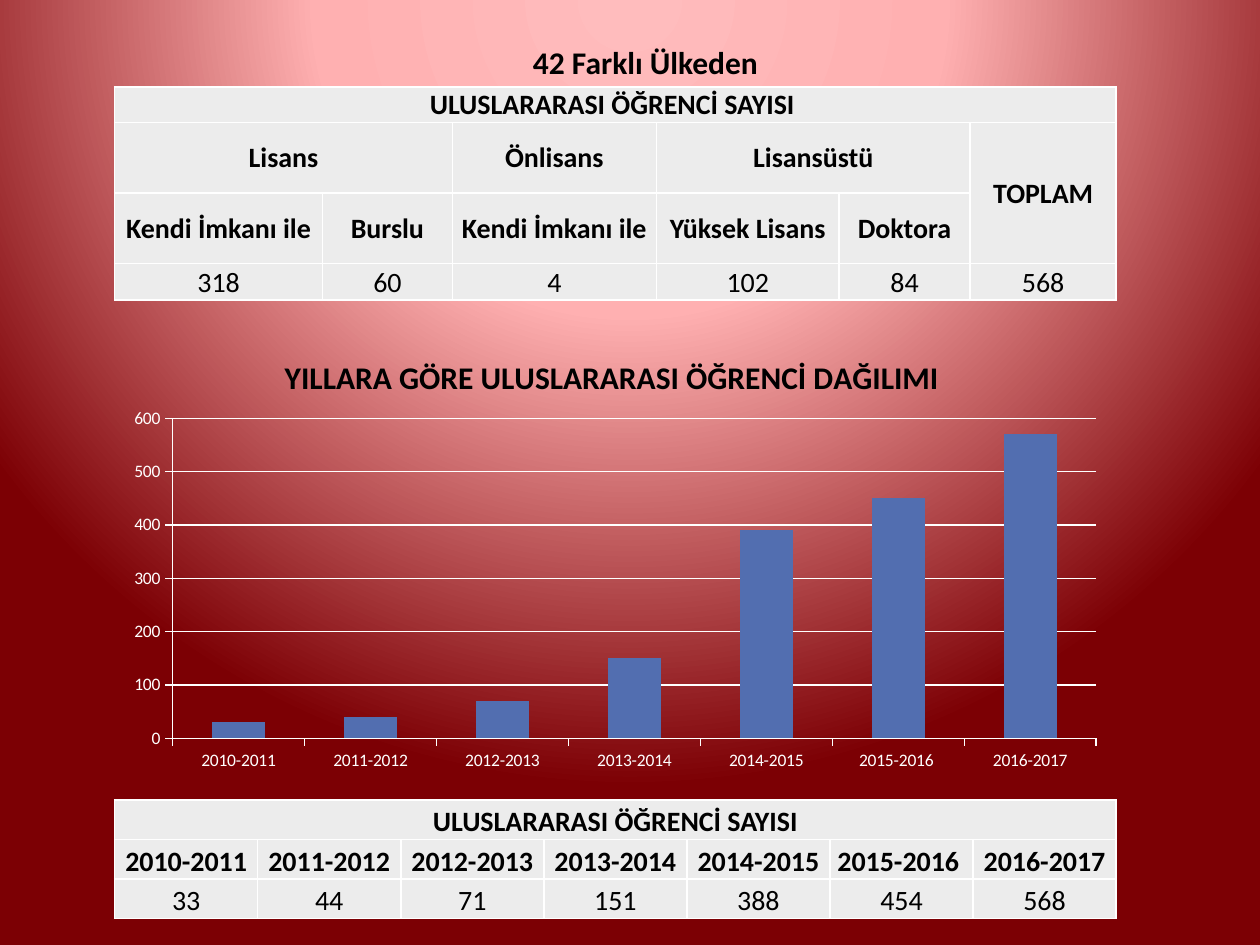
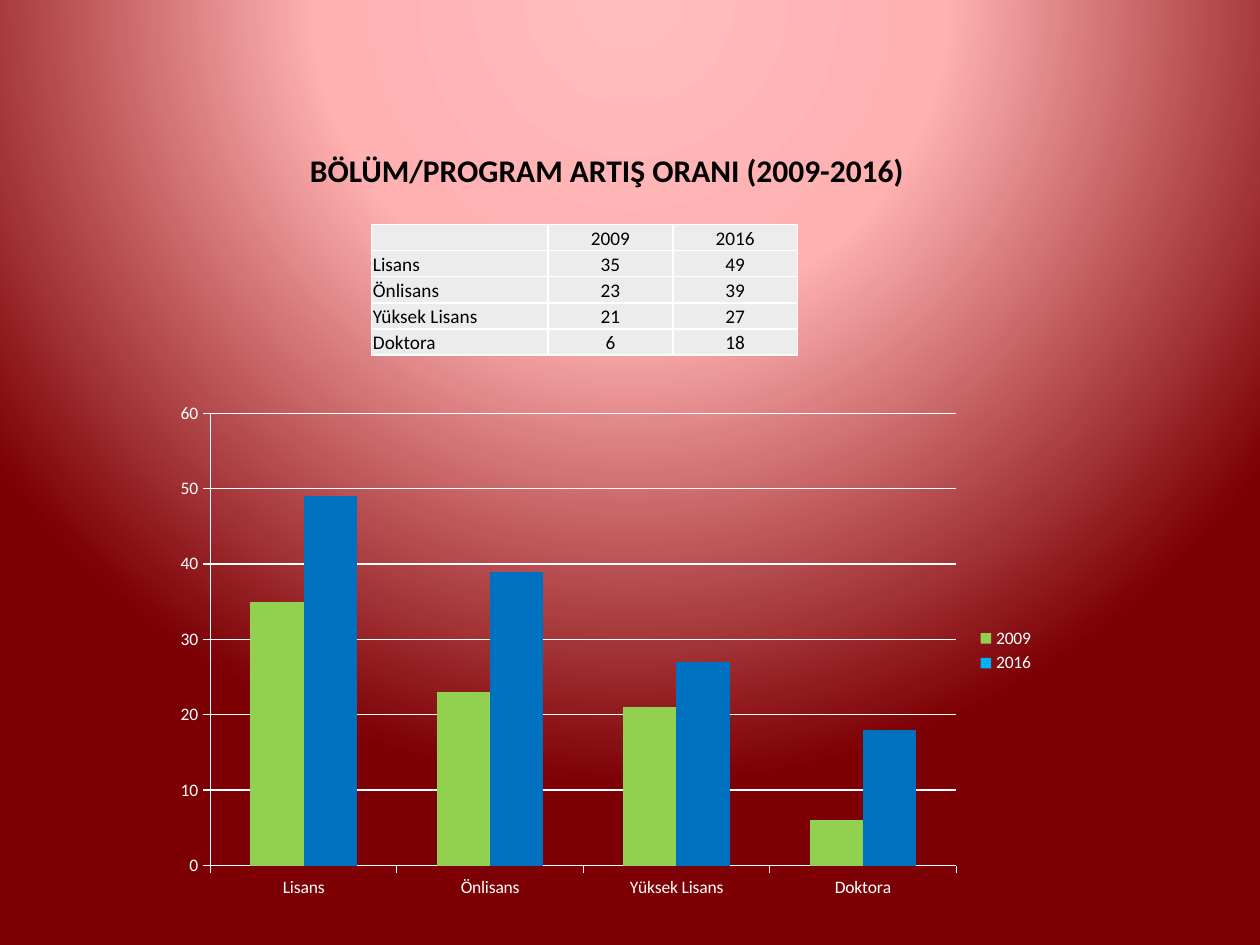
"""Build two slides on student and programme numbers."""
from lxml import etree
from pptx import Presentation
from pptx.chart.data import CategoryChartData as ChartData
from pptx.dml.color import RGBColor
from pptx.enum.chart import XL_CHART_TYPE as Kind, XL_LEGEND_POSITION as Side, XL_TICK_MARK as Tick
from pptx.enum.text import MSO_ANCHOR as Anchor, MSO_AUTO_SIZE as Auto, PP_ALIGN as Align
from pptx.oxml import parse_xml
from pptx.oxml.ns import nsdecls, qn
from pptx.util import Inches, Pt

BLACK = RGBColor(0, 0, 0)
WHITE = RGBColor(255, 255, 255)
PALE = RGBColor(0xEC, 0xEC, 0xEC)
STEEL = RGBColor(0x52, 0x6E, 0xB0)
GREEN = RGBColor(0x92, 0xD0, 0x50)
SKY = RGBColor(0x00, 0xB0, 0xF0)
BLUE = RGBColor(0x00, 0x70, 0xC0)
GLOW = ((0, RGBColor(0xFF, 0xBC, 0xBD)), (40, RGBColor(0xFF, 0xB0, 0xB1)),
        (100, RGBColor(0x7C, 0x00, 0x04)))
FACE = "Calibri"
HEAD = {"name": FACE, "size": Pt(18), "bold": True}
CELL = {"margin_left": Inches(0.01), "margin_right": Inches(0.01),
        "margin_top": Inches(0.01), "margin_bottom": 0}
FRAME = {"auto_size": Auto.NONE, "word_wrap": False, "vertical_anchor": Anchor.TOP}
COUNT = "ULUSLARARASI ÖĞRENCİ SAYISI"
YEARS = ["2010-2011", "2011-2012", "2012-2013", "2013-2014", "2014-2015",
         "2015-2016 ", "2016-2017"]
TOTALS = [33, 44, 71, 151, 388, 454, 568]
LEVELS = ["Lisans", "Önlisans", "Yüksek Lisans", "Doktora"]
OLD, NEW = [35, 23, 21, 6], [49, 39, 27, 18]


def style(item, form):
    """Set each attribute named in form."""
    for key, val in form.items():
        setattr(item, key, val)


def ink(font, form, tint=BLACK):
    """Format a font and colour it."""
    style(font, form)
    font.color.rgb = tint


def paint(fill, tint):
    """Fill with one colour."""
    fill.solid()
    fill.fore_color.rgb = tint


def box(*nums):
    """Turn numbers into inches."""
    return [Inches(n) for n in nums]


def glow(master):
    """Give the master its round red gradient."""
    master.background.fill.solid()
    stops = "".join(f'<a:gs pos="{at * 1000}"><a:srgbClr val="{tint}"/></a:gs>'
                    for at, tint in GLOW)
    grad = parse_xml(
        f'<a:gradFill {nsdecls("a")} rotWithShape="1"><a:gsLst>{stops}</a:gsLst>'
        '<a:path path="circle"><a:fillToRect l="50000" t="-80000" r="50000" b="180000"/>'
        '</a:path></a:gradFill>')
    solid = master.element.find(".//" + qn("p:bgPr")).find(qn("a:solidFill"))
    solid.getparent().replace(solid, grad)


def page(deck, text, place):
    """Add a slide with its title."""
    slide = deck.slides.add_slide(deck.slide_layouts[5])
    title = slide.shapes.title
    style(title, dict(zip(("left", "top", "width", "height"), box(*place))))
    style(title.text_frame, FRAME)
    para = title.text_frame.paragraphs[0]
    para.alignment = Align.LEFT
    run = para.add_run()
    run.text = text
    ink(run.font, HEAD)
    return slide


def edge(cell):
    """Draw white lines on all sides of a cell."""
    props = cell._tc.get_or_add_tcPr()
    for pos, side in enumerate(("lnL", "lnR", "lnT", "lnB")):
        line = etree.Element(qn("a:" + side), w="12700")
        fill = etree.SubElement(line, qn("a:solidFill"))
        etree.SubElement(fill, qn("a:srgbClr"), val=str(WHITE))
        props.insert(pos, line)


def write(cell, text, size, bold, align, anchor):
    """Fill, line and letter one cell."""
    paint(cell.fill, PALE)
    edge(cell)
    style(cell, {**CELL, "vertical_anchor": anchor})
    para = cell.text_frame.paragraphs[0]
    para.alignment = align
    if text == "":
        para._p.get_or_add_endParaRPr().set("sz", str(size * 100))
        return
    run = para.add_run()
    run.text = str(text)
    ink(run.font, {"name": FACE, "size": Pt(size), "bold": bold})


def grid(slide, place, wide, high, rows, size, heads=0, spans=(), mid=(), names=False):
    """Add a table; heads counts bold rows, mid lists centred ones."""
    shape = slide.shapes.add_table(len(rows), len(wide), *box(*place))
    table = shape.table
    for col, width in zip(table.columns, wide):
        col.width = Inches(width)
    for row, height in zip(table.rows, high):
        row.height = Inches(height)
    for r, row in enumerate(rows):
        anchor = Anchor.MIDDLE if r in mid else Anchor.BOTTOM
        for c, text in enumerate(row):
            align = Align.LEFT if names and c == 0 else Align.CENTER
            write(table.cell(r, c), text, size, r < heads, align, anchor)
    for top, left, low, right in spans:
        table.cell(top, left).merge(table.cell(low, right))


def inset(chart, place, inner):
    """Fix the inner plot area, given in inches on the slide."""
    left, top, width, height = place
    x, y, w, h = inner
    spots = ((x - left) / width, (y - top) / height, w / width, h / height)
    marks = "".join(f'<c:{key} val="{val:.4f}"/>' for key, val in zip("xywh", spots))
    area = chart._chartSpace.find(".//" + qn("c:plotArea"))
    for old in area.findall(qn("c:layout")):
        area.remove(old)
    area.insert(0, parse_xml(
        f'<c:layout {nsdecls("c")}><c:manualLayout><c:layoutTarget val="inner"/>'
        f'<c:xMode val="edge"/><c:yMode val="edge"/>{marks}</c:manualLayout></c:layout>'))


def bars(slide, place, inner, cats, sets, top):
    """Add a column chart from (name, values, colour) sets."""
    data = ChartData()
    data.categories = cats
    for name, vals, _ in sets:
        data.add_series(name, vals)
    chart = slide.shapes.add_chart(Kind.COLUMN_CLUSTERED, *box(*place), data).chart
    ink(chart.font, {"name": FACE, "size": Pt(10)}, WHITE)
    style(chart, {"has_title": False, "has_legend": len(sets) > 1})
    plot = chart.plots[0]
    style(plot, {"gap_width": 150, "vary_by_categories": False})
    for item, (_, _, tint) in zip(plot.series, sets):
        paint(item.format.fill, tint)
    for axis in (chart.category_axis, chart.value_axis):
        style(axis, {"major_tick_mark": Tick.OUTSIDE, "minor_tick_mark": Tick.NONE})
        axis.format.line.color.rgb = WHITE
    scale = chart.value_axis
    style(scale, {"minimum_scale": 0, "maximum_scale": top, "major_unit": top / 6,
                  "has_major_gridlines": True})
    scale.major_gridlines.format.line.color.rgb = WHITE
    if chart.has_legend:
        style(chart.legend, {"position": Side.RIGHT, "include_in_layout": False})
    inset(chart, place, inner)
    return chart


def label(chart, text):
    """Put a title on a chart."""
    frame = chart.chart_title.text_frame
    frame.text = text
    ink(frame.paragraphs[0].runs[0].font, HEAD)
    chart.chart_title.include_in_layout = False


def students(deck):
    """Build the slide on foreign students."""
    slide = page(deck, "42 Farklı Ülkeden", (4.13, 0.29, 2.06, 0.4))
    own = "Kendi İmkanı ile"
    rows = [[COUNT + " "] + [""] * 5,
            ["Lisans", "", "Önlisans", "Lisansüstü", "", "TOPLAM"],
            [own, "Burslu", own, "Yüksek Lisans", "Doktora", ""],
            [318, 60, 4, 102, 84, 568]]
    grid(slide, (0.91, 0.69, 7.95, 1.7), (1.65, 1.03, 1.62, 1.45, 1.04, 1.16),
         (0.28, 0.56, 0.56, 0.29), rows, 16, heads=3, mid=(1, 2),
         spans=((0, 0, 0, 5), (1, 0, 1, 1), (1, 3, 1, 4), (1, 5, 2, 5)))
    tens = [round(n, -1) for n in TOTALS]
    chart = bars(slide, (0.91, 2.65, 7.95, 3.54), (1.37, 3.32, 7.33, 2.54), YEARS,
                 [("Series 1", tens, STEEL)], 600)
    label(chart, "YILLARA GÖRE ULUSLARARASI ÖĞRENCİ DAĞILIMI ")
    size = len(YEARS)
    grid(slide, (0.91, 6.35, 7.95, 0.94), [7.95 / size] * size, [0.94 / 3] * 3,
         [[COUNT] + [""] * (size - 1), YEARS, TOTALS], 16, heads=2,
         spans=((0, 0, 0, size - 1),))


def growth(deck):
    """Build the slide on programme growth."""
    slide = page(deck, "BÖLÜM/PROGRAM ARTIŞ ORANI (2009-2016)", (2.36, 1.15, 4.96, 0.4))
    grid(slide, (2.95, 1.78, 3.39, 1.04), (1.4, 0.99, 0.99), [1.04 / 5] * 5,
         [["", 2009, 2016], *zip(LEVELS, OLD, NEW)], 11, names=True)
    chart = bars(slide, (1.3, 3.12, 7.01, 4.09), (1.67, 3.28, 5.92, 3.59), LEVELS,
                 [("2009", OLD, GREEN), ("2016", NEW, SKY)], 60)
    last = chart.plots[0].series[1]
    for pos in range(len(LEVELS)):
        paint(last.points[pos].format.fill, BLUE)


def main():
    """Build and save the deck."""
    deck = Presentation()
    style(deck, {"slide_width": Inches(10), "slide_height": Inches(7.5)})
    glow(deck.slide_master)
    students(deck)
    growth(deck)
    deck.save("out.pptx")


if __name__ == "__main__":
    main()
